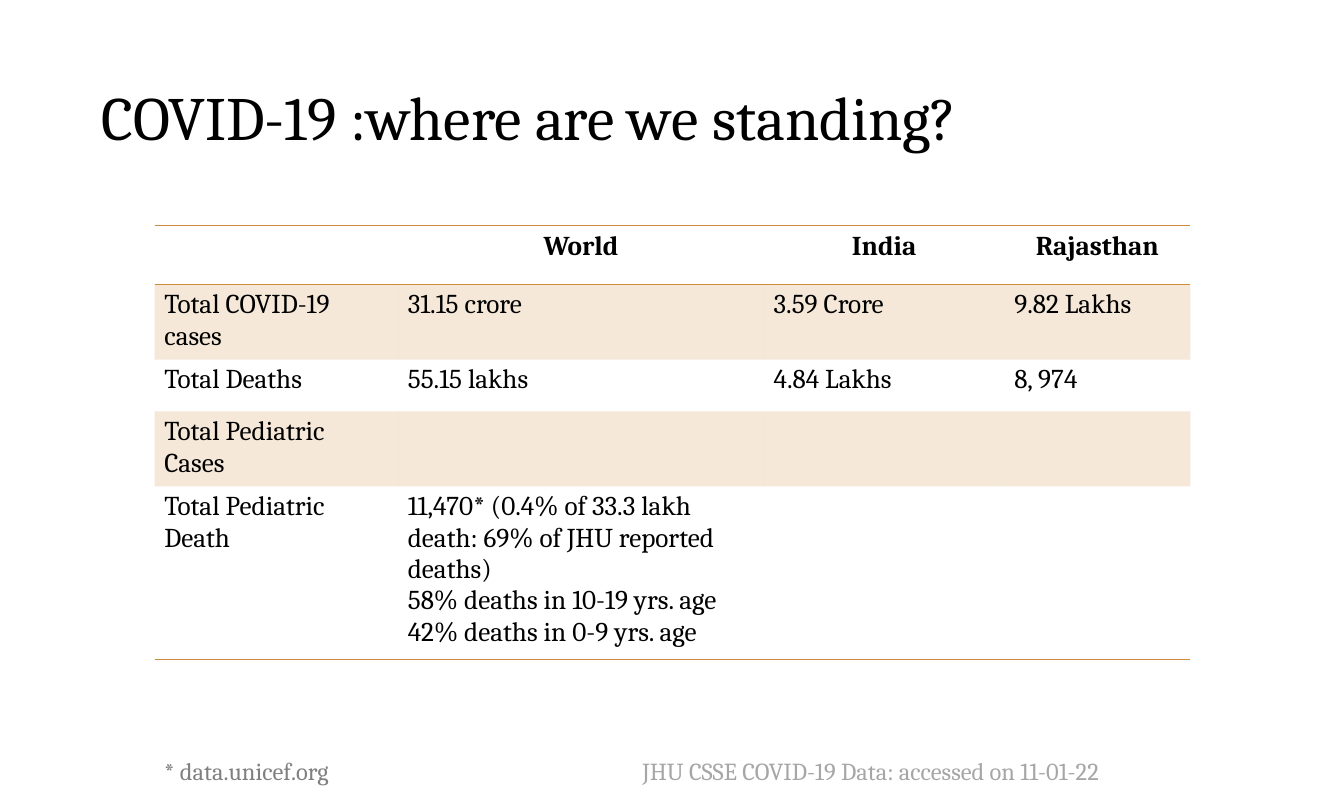
import dataclasses

import pptx
import pptx.dml.color
import pptx.enum.text
import pptx.oxml
import pptx.oxml.ns
import pptx.util
from lxml import etree

Inches = pptx.util.Inches
Align = pptx.enum.text.PP_ALIGN
Anchor = pptx.enum.text.MSO_ANCHOR


@dataclasses.dataclass(frozen=True)
class Theme:
    font: str = "Cambria"
    ink: str = "000000"
    accent: str = "CE8D3E"
    note: str = "808080"
    faint_note: str = "A6A6A6"
    title_size: float = 45.3
    table_size: float = 20
    note_size: float = 18
    rule_width: float = 1
    band_opacity: int = 20


THEME = Theme()
PLAIN_TABLE_STYLE = "{2D5ABB26-0587-4C30-8999-92F81FD0307C}"
COLUMN_WIDTHS = [2.49, 3.74, 2.46, 1.9]
ROW_HEIGHTS = [0.6, 0.53, 0.53, 0.53, 1.4]
CASE_ROWS = [
    ["", "World", "India", "Rajasthan"],
    ["Total COVID-19 cases", "31.15 crore", "3.59 Crore", "9.82 Lakhs"],
    ["Total Deaths", "55.15 lakhs", "4.84 Lakhs", "8, 974"],
    ["Total Pediatric Cases", "", "", ""],
    [
        "Total Pediatric Death",
        "11,470* (0.4% of 33.3 lakh death: 69% of JHU reported deaths)\n"
        "58% deaths in 10-19 yrs. age\n"
        "42% deaths in 0-9 yrs. age",
        "",
        "",
    ],
]


def add_span(para, text, size, color, bold=False):
    span = para.add_run()
    span.text = text
    span.font.name = THEME.font
    span.font.size = pptx.util.Pt(size)
    span.font.bold = bold
    span.font.color.rgb = pptx.dml.color.RGBColor.from_string(color)


def add_text(page, box, text, size, color, wrap=True, anchor=Anchor.TOP, spacing=1.0):
    frame = page.shapes.add_textbox(*map(Inches, box)).text_frame
    frame.word_wrap = wrap
    frame.vertical_anchor = anchor
    para = frame.paragraphs[0]
    para.line_spacing = spacing
    add_span(para, text, size, color)


def fill_band(cell):
    cell.fill.solid()
    cell.fill.fore_color.rgb = pptx.dml.color.RGBColor.from_string(THEME.accent)
    color = cell._tc.tcPr.find(".//" + pptx.oxml.ns.qn("a:srgbClr"))
    alpha = etree.SubElement(color, pptx.oxml.ns.qn("a:alpha"))
    alpha.set("val", str(THEME.band_opacity * 1000))


def add_rules(cell, sides):
    properties = cell._tc.get_or_add_tcPr()
    for position, side in enumerate(sides):
        rule = pptx.oxml.parse_xml(
            f'<a:ln{side} {pptx.oxml.ns.nsdecls("a")} w="{pptx.util.Pt(THEME.rule_width)}">'
            f'<a:solidFill><a:srgbClr val="{THEME.accent}"/></a:solidFill></a:ln{side}>'
        )
        properties.insert(position, rule)


def add_case_table(page, box):
    frame = page.shapes.add_table(len(CASE_ROWS), len(COLUMN_WIDTHS), *map(Inches, box))
    table = frame.table
    table._tbl.tblPr.find(pptx.oxml.ns.qn("a:tableStyleId")).text = PLAIN_TABLE_STYLE
    for column, width in zip(table.columns, COLUMN_WIDTHS):
        column.width = Inches(width)
    for row, height in zip(table.rows, ROW_HEIGHTS):
        row.height = Inches(height)
    last = len(CASE_ROWS) - 1
    for row_number, texts in enumerate(CASE_ROWS):
        header = row_number == 0
        for column_number, text in enumerate(texts):
            cell = table.cell(row_number, column_number)
            if row_number % 2:
                fill_band(cell)
            else:
                cell.fill.background()
            add_rules(cell, {0: "TB", last: "B"}.get(row_number, ""))
            for line_number, line in enumerate(text.splitlines()):
                frame = cell.text_frame
                para = frame.add_paragraph() if line_number else frame.paragraphs[0]
                para.alignment = Align.CENTER if header else Align.LEFT
                add_span(para, line, THEME.table_size, THEME.ink, header)


def add_sources(page, box):
    left, top, width, height = box
    credit_left = left + 4.89
    add_text(page, (credit_left, top, left + width - credit_left, height),
             "JHU CSSE COVID-19 Data: accessed on 11-01-22",
             THEME.note_size, THEME.faint_note)
    add_text(page, (left, top, 1.97, height), "* data.unicef.org",
             THEME.note_size, THEME.note, wrap=False)


def build_status_slide(deck):
    page = deck.slides.add_slide(deck.slide_layouts[6])
    add_text(page, (0.94, 0.44, 11.85, 1.58), "COVID-19 :where are we standing?",
             THEME.title_size, THEME.ink, anchor=Anchor.MIDDLE, spacing=0.9)
    add_case_table(page, (1.58, 2.31, sum(COLUMN_WIDTHS), sum(ROW_HEIGHTS)))
    add_sources(page, (1.58, 7.68, 12.12, 0.4))


def main():
    deck = pptx.Presentation()
    deck.slide_width = Inches(13.74)
    deck.slide_height = Inches(8.18)
    build_status_slide(deck)
    deck.save("out.pptx")


if __name__ == "__main__":
    main()
